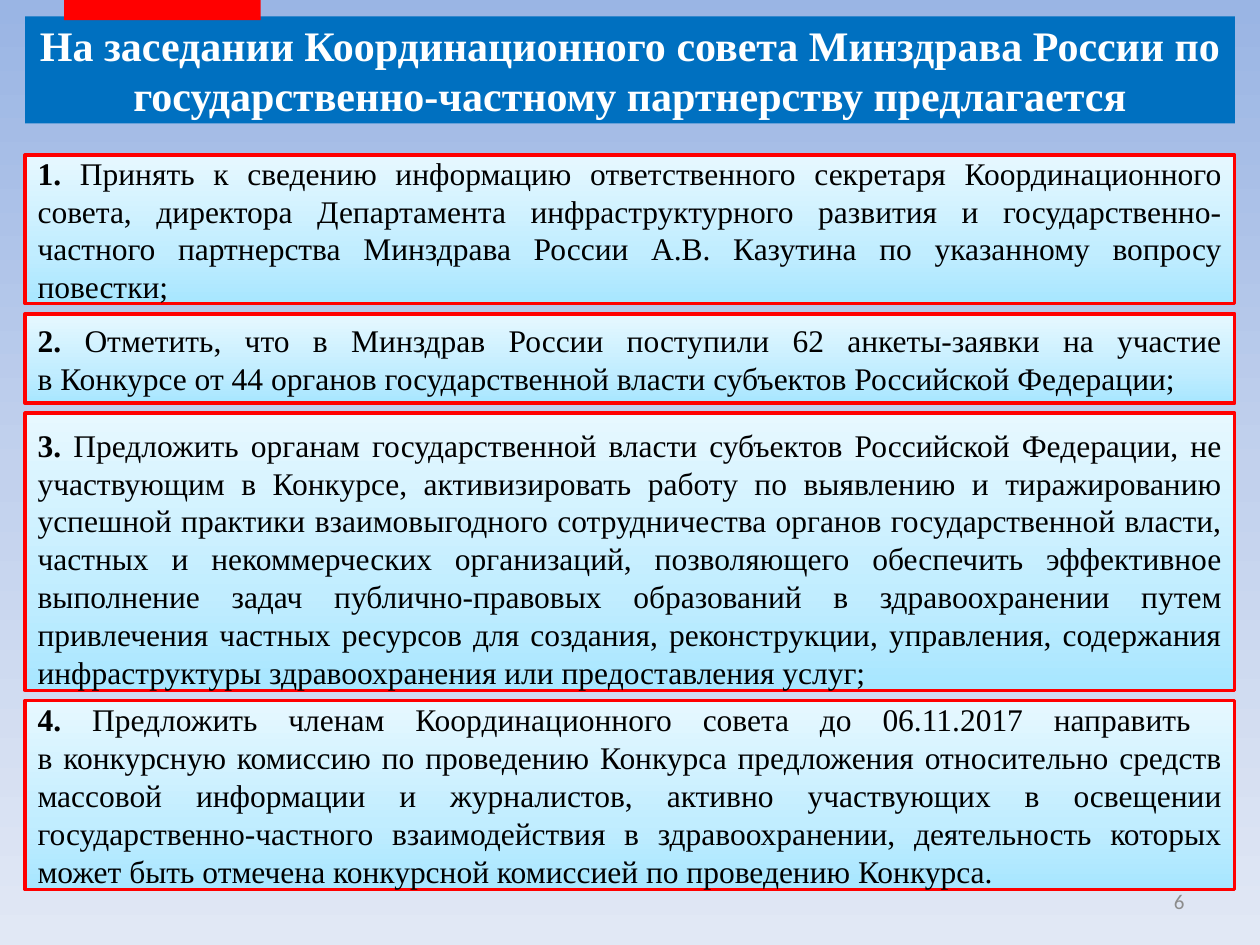
"""Build the slide with the proposals of the Coordination Council."""
from copy import deepcopy

from pptx import Presentation
from pptx import util as u
from pptx.dml.color import RGBColor
from pptx.enum import shapes, text
from pptx.oxml.ns import qn

HEADING = "На заседании Координационного совета Минздрава России по государственно-частному партнерству предлагается"
PAGE = "6"
PROPOSALS = [
    (1.18, 0.05, "Принять к сведению информацию ответственного секретаря Координационного совета, директора Департамента инфраструктурного развития и государственно-частного партнерства Минздрава России А.В. Казутина по указанному вопросу повестки;"),
    (0.71, 0.05, "Отметить, что в Минздрав России поступили 62 анкеты-заявки на участие\nв Конкурсе от 44 органов государственной власти субъектов Российской Федерации;"),
    (2.2, 0.15, "Предложить органам государственной власти субъектов Российской Федерации, не участвующим в Конкурсе, активизировать работу по выявлению и тиражированию успешной практики взаимовыгодного сотрудничества органов государственной власти, частных и некоммерческих организаций, позволяющего обеспечить эффективное выполнение задач публично-правовых образований в здравоохранении путем привлечения частных ресурсов для создания, реконструкции, управления, содержания инфраструктуры здравоохранения или предоставления услуг;"),
    (1.5, 0.05, "Предложить членам Координационного совета до 06.11.2017 направить \nв конкурсную комиссию по проведению Конкурса предложения относительно средств массовой информации и журналистов, активно участвующих в освещении государственно-частного взаимодействия в здравоохранении, деятельность которых может быть отмечена конкурсной комиссией по проведению Конкурса."),
]
SKY = [(0, "9AB5E4"), (0.5, "C2D1ED"), (1, "E1E8F5")]
ICE = [(0, "A7E6FF"), (0.35, "C1EDFF"), (1, "E7F8FF")]
SERIF, SANS = "Times New Roman", "Calibri"
WIDTH, HEIGHT = 10, 7.5
MARGIN, GAP, FIRST_TOP = 0.2, 0.08, 1.23
INNER = WIDTH - 2 * MARGIN


def colour(value):
    """Turn a hex string into a colour."""
    return RGBColor.from_string(value)


def apply(target, values):
    """Set every attribute in the dict."""
    for key, value in values.items():
        setattr(target, key, value)


def place(shape, left, top, width, height):
    """Position a shape in inches."""
    apply(shape, dict(left=u.Inches(left), top=u.Inches(top), width=u.Inches(width), height=u.Inches(height)))


def blend(fill, owner, stops, angle):
    """Fill with a linear gradient of any number of stops."""
    fill.gradient()
    fill.gradient_angle = angle
    listing = owner.find(".//" + qn("a:gsLst"))
    while len(listing) < len(stops):
        listing.append(deepcopy(listing[0]))
    for stop, (position, value) in zip(fill.gradient_stops, stops):
        stop.position = position
        stop.color.rgb = colour(value)


def frame(shape, align, top_inset=0.05):
    """Set up wrapping and anchoring, and return the first paragraph."""
    apply(shape.text_frame, dict(
        word_wrap=True, auto_size=text.MSO_AUTO_SIZE.NONE,
        vertical_anchor=text.MSO_ANCHOR.MIDDLE, margin_top=u.Inches(top_inset)))
    paragraph = shape.text_frame.paragraphs[0]
    paragraph.alignment = align
    return paragraph


def write(paragraph, words, size, ink, name=SERIF, bold=False):
    """Add a formatted run."""
    run = paragraph.add_run()
    run.text = words
    apply(run.font, dict(size=u.Pt(size), name=name, bold=bold))
    run.font.color.rgb = colour(ink)


def rectangle(slide, *box):
    """Add a rectangle without a shadow."""
    shape = slide.shapes.add_shape(shapes.MSO_SHAPE.RECTANGLE, *map(u.Inches, box))
    shape.shadow.inherit = False
    return shape


def main():
    """Compose and save the slide."""
    deck = Presentation()
    apply(deck, dict(slide_width=u.Inches(WIDTH), slide_height=u.Inches(HEIGHT)))
    slide = deck.slides.add_slide(deck.slide_layouts[5])
    blend(slide.background.fill, slide.background._cSld, SKY, 270)

    heading = slide.shapes.title
    place(heading, MARGIN, 0.13, INNER, 0.85)
    heading.fill.solid()
    heading.fill.fore_color.rgb = colour("0070C0")
    write(frame(heading, text.PP_ALIGN.CENTER), HEADING, 24, "FFFFFF", bold=True)

    page = slide.shapes.add_textbox(*map(u.Inches, (7.17, 6.95, 2.33, 0.4)))
    write(frame(page, text.PP_ALIGN.RIGHT), PAGE, 12, "8C8C8C", SANS)

    tab = rectangle(slide, 0.51, 0, 1.56, 0.16)
    tab.fill.solid()
    tab.fill.fore_color.rgb = colour("FF0000")
    tab.line.fill.background()

    top = FIRST_TOP
    for number, (height, inset, wording) in enumerate(PROPOSALS, 1):
        proposal = rectangle(slide, MARGIN, top, INNER, height)
        blend(proposal.fill, proposal._element, ICE, 90)
        proposal.line.color.rgb = colour("FF0000")
        proposal.line.width = u.Pt(2)
        paragraph = frame(proposal, text.PP_ALIGN.JUSTIFY, inset)
        write(paragraph, f"{number}. ", 18, "000000", bold=True)
        for index, line in enumerate(wording.split("\n")):
            if index:
                paragraph.add_line_break()
            write(paragraph, line, 18, "000000")
        top += height + GAP

    deck.save("out.pptx")


if __name__ == "__main__":
    main()
